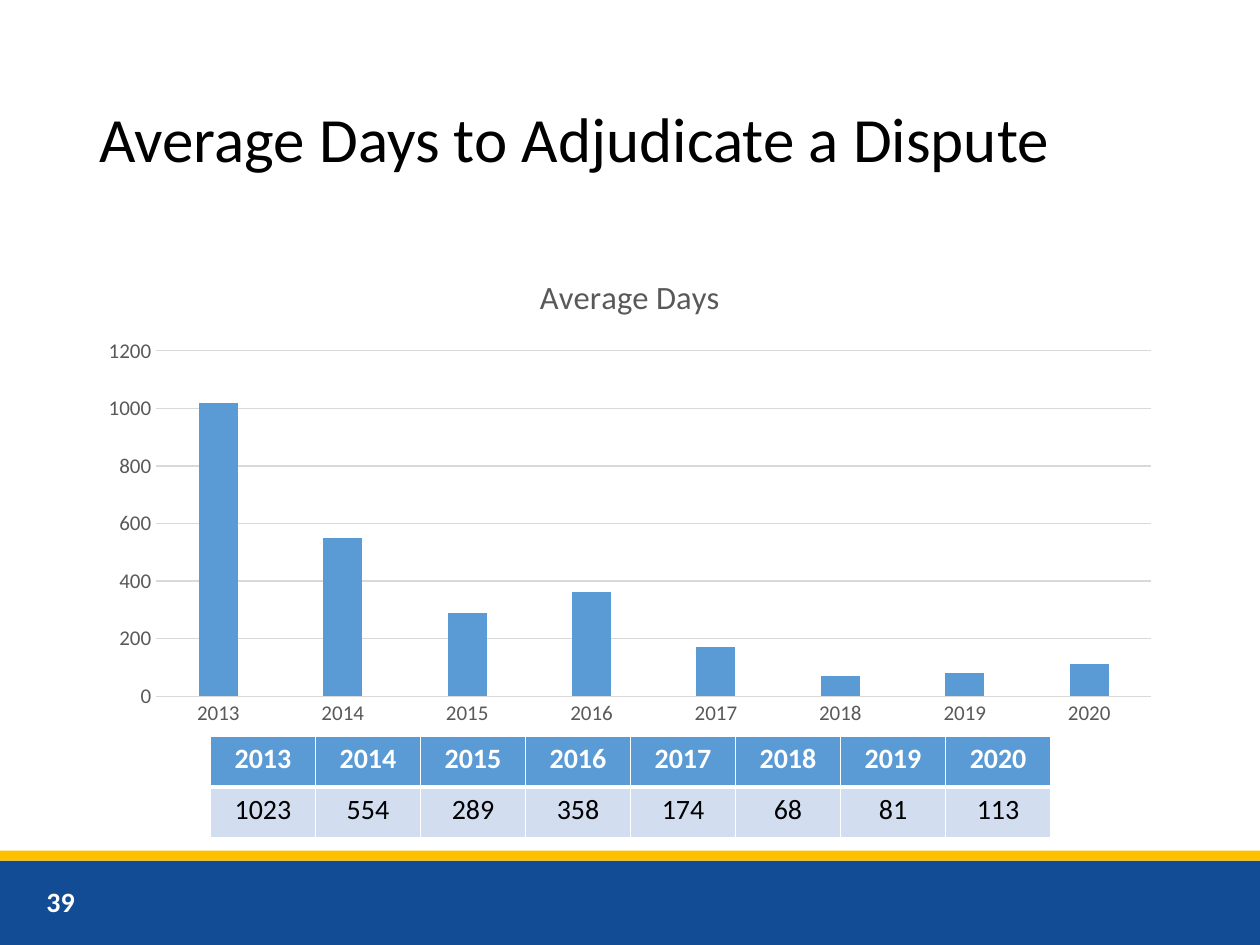
from lxml import etree
from pptx import Presentation
from pptx.chart import data
from pptx.dml.color import RGBColor
from pptx.enum import chart as chart_enum, shapes, text
from pptx.oxml import ns
from pptx.util import Inches, Pt

COLORS = {"navy": "124C95", "gold": "FFC000", "blue": "5B9BD5", "pale": "D2DEEF",
          "grid": "D9D9D9", "gray": "595959", "black": "000000", "white": "FFFFFF"}
FONT = "Calibri"
TITLE = "Average Days to Adjudicate a Dispute"
CHART_TITLE = "Average Days"
PAGE_NUMBER = "39"
AVERAGE_DAYS = {"2013": 1023, "2014": 554, "2015": 289, "2016": 358,
                "2017": 174, "2018": 68, "2019": 81, "2020": 113}
BANDS = [("navy", 6.83, 0.67), ("gold", 6.75, 0.08)]
TABLE_ROWS = [(list(AVERAGE_DAYS), "blue", "white", True, {"B": 3}),
              ([str(days) for days in AVERAGE_DAYS.values()], "pale", "black", False, {"T": 3})]


def rgb(name):
    return RGBColor.from_string(COLORS[name])


def box(left, top, width, height):
    return [Inches(value) for value in (left, top, width, height)]


def style_font(font, size, color, bold=False):
    font.name, font.size, font.bold = FONT, Pt(size), bold
    font.color.rgb = rgb(color)


def write(frame, content, size, color, bold=False, align=text.PP_ALIGN.LEFT,
          anchor=text.MSO_ANCHOR.TOP, spacing=None):
    frame.word_wrap = True
    frame.vertical_anchor = anchor
    paragraph = frame.paragraphs[0]
    paragraph.alignment = align
    paragraph.line_spacing = spacing
    run = paragraph.add_run()
    run.text = content
    style_font(run.font, size, color, bold)


def add_borders(cell, heavy):
    properties = cell._tc.get_or_add_tcPr()
    for side in "LRTB":
        line = etree.SubElement(properties, ns.qn(f"a:ln{side}"), w=str(Pt(heavy.get(side, 1))))
        fill = etree.SubElement(line, ns.qn("a:solidFill"))
        etree.SubElement(fill, ns.qn("a:srgbClr"), val=COLORS["white"])


def add_bands(slide):
    for color, top, height in BANDS:
        band = slide.shapes.add_shape(shapes.MSO_SHAPE.RECTANGLE, *box(0, top, 10, height))
        band.shadow.inherit = False
        band.fill.solid()
        band.fill.fore_color.rgb = rgb(color)
        band.line.fill.background()


def add_days_chart(slide):
    chart_data = data.CategoryChartData()
    chart_data.categories = list(AVERAGE_DAYS)
    chart_data.add_series(CHART_TITLE, [round(days, -1) for days in AVERAGE_DAYS.values()])
    chart = slide.shapes.add_chart(chart_enum.XL_CHART_TYPE.COLUMN_CLUSTERED,
                                   *box(0.69, 2, 8.62, 3.84), chart_data).chart
    style_font(chart.font, 10, "black")
    chart.has_legend = False
    chart.has_title = True
    chart.chart_title.include_in_layout = False
    run = chart.chart_title.text_frame.paragraphs[0].add_run()
    run.text = CHART_TITLE
    style_font(run.font, 18.6, "gray")

    plot = chart.plots[0]
    plot.gap_width, plot.overlap, plot.vary_by_categories = 219, -27, False
    bars = plot.series[0].format
    bars.fill.solid()
    bars.fill.fore_color.rgb = rgb("blue")
    bars.line.fill.background()

    for axis in (chart.category_axis, chart.value_axis):
        axis.major_tick_mark = axis.minor_tick_mark = chart_enum.XL_TICK_MARK.NONE
        style_font(axis.tick_labels.font, 12, "gray")
    values = chart.value_axis
    values.minimum_scale, values.maximum_scale, values.major_unit = 0, 1200, 200
    values.format.line.fill.background()
    values.has_major_gridlines = True
    for line in (chart.category_axis.format.line, values.major_gridlines.format.line):
        line.color.rgb = rgb("grid")
        line.width = Pt(0.75)


def add_days_table(slide):
    table = slide.shapes.add_table(len(TABLE_ROWS), len(AVERAGE_DAYS),
                                   *box(1.67, 5.84, 6.67, 0.81)).table
    for row, (labels, fill, color, bold, heavy) in enumerate(TABLE_ROWS):
        for column, label in enumerate(labels):
            cell = table.cell(row, column)
            add_borders(cell, heavy)
            cell.fill.solid()
            cell.fill.fore_color.rgb = rgb(fill)
            write(cell.text_frame, label, 16, color, bold, text.PP_ALIGN.CENTER)


def main():
    presentation = Presentation()
    presentation.slide_width, presentation.slide_height = Inches(10), Inches(7.5)
    slide = presentation.slides.add_slide(presentation.slide_layouts[5])
    add_bands(slide)
    number = slide.shapes.add_textbox(*box(0.27, 6.95, 2.25, 0.4))
    write(number.text_frame, PAGE_NUMBER, 16, "white", bold=True, anchor=text.MSO_ANCHOR.MIDDLE)
    title = slide.shapes.title
    title.left, title.top, title.width, title.height = box(0.69, 0.4, 8.62, 1.45)
    write(title.text_frame, TITLE, 36, "black", anchor=text.MSO_ANCHOR.MIDDLE, spacing=0.9)
    add_days_chart(slide)
    add_days_table(slide)
    presentation.save("out.pptx")


if __name__ == "__main__":
    main()
